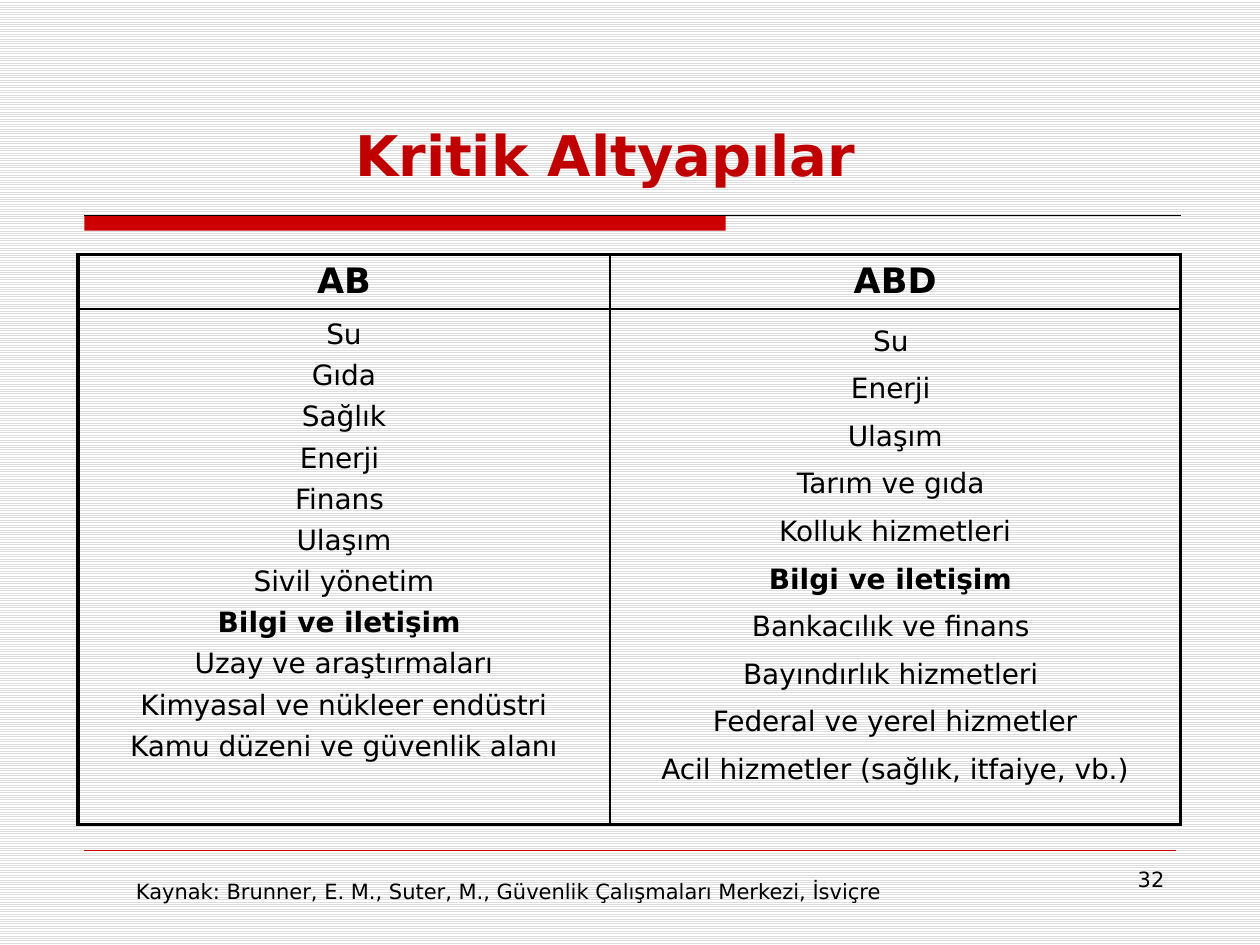
from dataclasses import dataclass

from lxml.etree import SubElement
from pptx import Presentation
from pptx.dml.color import RGBColor
from pptx.enum.dml import MSO_PATTERN
from pptx.enum.shapes import MSO_CONNECTOR, MSO_SHAPE
from pptx.enum.text import MSO_ANCHOR, PP_ALIGN
from pptx.oxml.ns import qn
from pptx.util import Inches, Pt


@dataclass(frozen=True)
class Theme:
    font: str = "DejaVu Sans"
    ink: str = "000000"
    title: str = "C00000"
    accent: str = "CC0000"
    paper: str = "FFFFFF"
    stripe: str = "DDDDDD"
    title_size: int = 32
    header_size: int = 20
    body_size: int = 16
    small_size: int = 12
    outer_border: float = 2.25
    inner_border: float = 1


@dataclass(frozen=True)
class Region:
    name: str
    width: float
    line_spacing: float
    sectors: tuple[str, ...]


THEME = Theme()
HIGHLIGHT = "Bilgi ve iletişim "
ROW_HEIGHTS = (0.42, 4.09)
REGIONS = (
    Region("AB", 4.22, 1.1, (
        "Su", "Gıda", "Sağlık", "Enerji ", "Finans ", "Ulaşım", "Sivil yönetim",
        HIGHLIGHT, "Uzay ve araştırmaları", "Kimyasal ve nükleer endüstri",
        "Kamu düzeni ve güvenlik alanı")),
    Region("ABD", 4.53, 1.3, (
        "Su ", "Enerji ", "Ulaşım", "Tarım ve gıda ", "Kolluk hizmetleri",
        HIGHLIGHT, "Bankacılık ve finans ", "Bayındırlık hizmetleri ",
        "Federal ve yerel hizmetler", "Acil hizmetler (sağlık, itfaiye, vb.)")),
)


def write(para, text: str, *, size: int, color: str = THEME.ink, bold: bool = False,
          align=PP_ALIGN.LEFT, line_spacing: float = 1.0, before: float = 0) -> None:
    para.alignment = align
    para.line_spacing = line_spacing
    para.space_before = Pt(before)
    span = para.add_run()
    span.text = text
    span.font.name = THEME.font
    span.font.size = Pt(size)
    span.font.bold = bold
    span.font.color.rgb = RGBColor.from_string(color)


def add_text(page, text: str, left: float, top: float, width: float, height: float,
             *, anchor=MSO_ANCHOR.TOP, **style) -> None:
    box = page.shapes.add_textbox(Inches(left), Inches(top), Inches(width), Inches(height))
    box.text_frame.word_wrap = True
    box.text_frame.vertical_anchor = anchor
    write(box.text_frame.paragraphs[0], text, **style)


def add_rule(page, left: float, right: float, top: float, color: str, weight: float) -> None:
    rule = page.shapes.add_connector(
        MSO_CONNECTOR.STRAIGHT, Inches(left), Inches(top), Inches(right), Inches(top))
    rule.line.color.rgb = RGBColor.from_string(color)
    rule.line.width = Pt(weight)
    SubElement(rule._element.spPr, qn("a:effectLst"))


def set_borders(cell, row: int, column: int) -> None:
    """Heavy lines around the table, light ones between its cells."""
    outer_sides = {
        "a:lnL": column == 0,
        "a:lnR": column == len(REGIONS) - 1,
        "a:lnT": row == 0,
        "a:lnB": row == len(ROW_HEIGHTS) - 1,
    }
    properties = cell._tc.get_or_add_tcPr()
    for side, is_outer in outer_sides.items():
        weight = THEME.outer_border if is_outer else THEME.inner_border
        line = SubElement(properties, qn(side), w=str(Pt(weight)))
        SubElement(SubElement(line, qn("a:solidFill")), qn("a:srgbClr"), val=THEME.ink)


def add_region_table(page, left: float, top: float) -> None:
    width = sum(region.width for region in REGIONS)
    table = page.shapes.add_table(
        len(ROW_HEIGHTS), len(REGIONS), Inches(left), Inches(top),
        Inches(width), Inches(sum(ROW_HEIGHTS))).table
    table.first_row = table.horz_banding = False
    for row, height in zip(table.rows, ROW_HEIGHTS):
        row.height = Inches(height)

    for column, region in enumerate(REGIONS):
        table.columns[column].width = Inches(region.width)
        for row in range(len(ROW_HEIGHTS)):
            cell = table.cell(row, column)
            set_borders(cell, row, column)
            cell.fill.background()
        write(table.cell(0, column).text_frame.paragraphs[0], region.name,
              size=THEME.header_size, bold=True, align=PP_ALIGN.CENTER)
        frame = table.cell(1, column).text_frame
        for index, sector in enumerate(region.sectors):
            para = frame.add_paragraph() if index else frame.paragraphs[0]
            write(para, sector, size=THEME.body_size, bold=sector == HIGHLIGHT,
                  align=PP_ALIGN.CENTER, line_spacing=region.line_spacing,
                  before=0.2 * THEME.body_size if index else 0)


def main() -> None:
    deck = Presentation()
    deck.slide_width, deck.slide_height = Inches(10), Inches(7.5)
    page = deck.slides.add_slide(deck.slide_layouts[6])

    # Striped background
    fill = page.background.fill
    fill.patterned()
    fill.pattern = MSO_PATTERN.LIGHT_HORIZONTAL
    fill.fore_color.rgb = RGBColor.from_string(THEME.stripe)
    fill.back_color.rgb = RGBColor.from_string(THEME.paper)

    # Title with its bar and rule
    bar = page.shapes.add_shape(
        MSO_SHAPE.RECTANGLE, Inches(0.67), Inches(1.71), Inches(5.09), Inches(0.12))
    bar.shadow.inherit = False
    bar.fill.solid()
    bar.fill.fore_color.rgb = RGBColor.from_string(THEME.accent)
    bar.line.fill.background()
    add_rule(page, 0.67, 9.37, 1.71, THEME.ink, 0.75)
    add_text(page, "Kritik Altyapılar", 2.72, 0.84, 5.2, 0.7, anchor=MSO_ANCHOR.BOTTOM,
             size=THEME.title_size, color=THEME.title, bold=True)

    # Comparison table
    add_region_table(page, 0.62, 2.02)

    # Footer
    add_rule(page, 0.67, 9.33, 6.75, THEME.accent, 0.25)
    add_text(page, "32", 7.17, 6.83, 2.17, 0.52,
             size=THEME.small_size, align=PP_ALIGN.RIGHT)
    add_text(page, "Kaynak: Brunner, E. M., Suter, M., Güvenlik Çalışmaları Merkezi, İsviçre",
             0.98, 6.82, 7.95, 0.4, anchor=MSO_ANCHOR.BOTTOM, size=THEME.small_size)

    deck.save("out.pptx")


if __name__ == "__main__":
    main()
